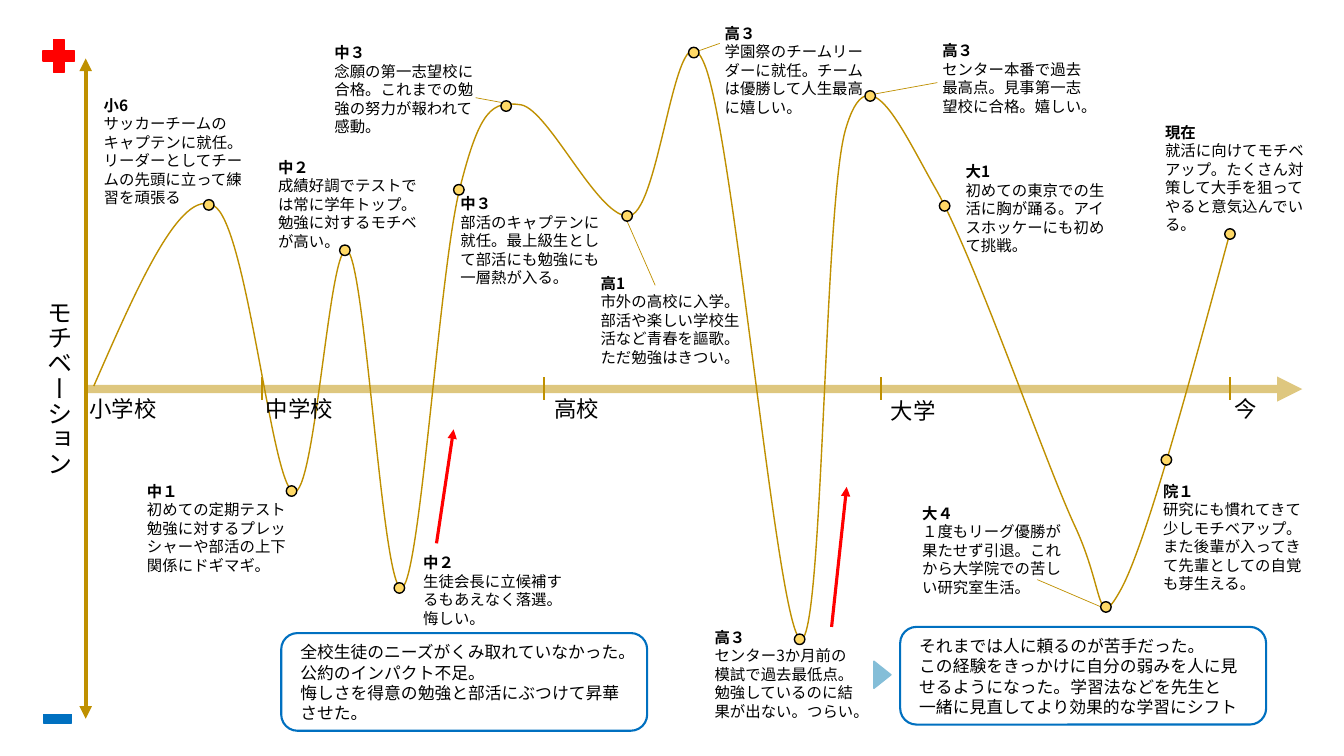
from lxml import etree
from pptx import Presentation
from pptx.dml.color import RGBColor
from pptx.enum import shapes, text
from pptx.oxml.ns import qn
from pptx.util import Pt

BLACK = RGBColor(0x00, 0x00, 0x00)
GOLD = RGBColor(0xBF, 0x90, 0x00)
YELLOW = RGBColor(0xFF, 0xD9, 0x66)
RED = RGBColor(0xFF, 0x00, 0x00)
BLUE = RGBColor(0x00, 0x70, 0xC0)
SKY = RGBColor(0x84, 0xBE, 0xD8)
FONT = "Noto Sans CJK JP"
LEADING = 1.2
MSO = shapes.MSO_SHAPE


class Board:
    """Draws on one slide; all lengths are in points."""

    def __init__(self, s):
        self.s = s

    def text(self, x, y, w, h, paragraphs, size, bold_first=False, vert=None):
        sp = self.s.shapes.add_textbox(Pt(x), Pt(y), Pt(w), Pt(h))
        tf = sp.text_frame
        tf.word_wrap = True
        tf.auto_size = text.MSO_AUTO_SIZE.SHAPE_TO_FIT_TEXT
        if vert:
            sp._element.txBody.bodyPr.set("vert", vert)
        tf.text = "\n".join(paragraphs)
        for i, p in enumerate(tf.paragraphs):
            p.line_spacing = Pt(size * LEADING)
            for r in p.runs:
                r.font.size = Pt(size)
                r.font.name = FONT
                r.font.bold = bold_first and i == 0
                r.font.color.rgb = BLACK
                ea = etree.SubElement(r.font._element, qn("a:ea"))
                ea.set("typeface", FONT)

    def note(self, x, y, lines, heading, body):
        h = lines * 11 * LEADING + 7.2
        self.text(x, y, 114.5, h, [heading, body], 11, bold_first=True)

    def shape(self, kind, x, y, w, h, fill, line, weight=1, rotation=0):
        sp = self.s.shapes.add_shape(kind, Pt(x), Pt(y), Pt(w), Pt(h))
        sp.shadow.inherit = False
        sp.rotation = rotation
        if fill is None:
            sp.fill.background()
        else:
            sp.fill.solid()
            sp.fill.fore_color.rgb = fill
        sp.line.color.rgb = line
        sp.line.width = Pt(weight)

    def line(self, x1, y1, x2, y2, color, weight, ends=(), alpha=None):
        sp = self.s.shapes.add_connector(
            shapes.MSO_CONNECTOR.STRAIGHT, Pt(x1), Pt(y1), Pt(x2), Pt(y2))
        sp.line.color.rgb = color
        sp.line.width = Pt(weight)
        ln = sp.line._get_or_add_ln()
        if alpha:
            clr = ln.find(".//" + qn("a:srgbClr"))
            etree.SubElement(clr, qn("a:alpha")).set("val", str(alpha * 1000))
        for end in ends:
            etree.SubElement(ln, qn("a:" + end)).set("type", "triangle")
        etree.SubElement(sp._element.spPr, qn("a:effectLst"))

    def curve(self, box, start, segments, color, weight):
        """Open Bézier curve; box is left, top, right, bottom."""
        left, top, right, bottom = box
        fb = self.s.shapes.build_freeform(Pt(left), Pt(top))
        fb.add_line_segments([(Pt(right), Pt(bottom))], close=False)
        sp = fb.convert_to_shape()
        outline = sp._element.xpath(".//a:path")[0]
        for child in list(outline):
            outline.remove(child)
        steps = [("a:moveTo", start)] + [("a:cubicBezTo", c) for c in segments]
        for tag, coords in steps:
            step = etree.SubElement(outline, qn(tag))
            for x, y in zip(coords[::2], coords[1::2]):
                pt = etree.SubElement(step, qn("a:pt"))
                pt.set("x", str(Pt(x) - Pt(left)))
                pt.set("y", str(Pt(y) - Pt(top)))
        sp.shadow.inherit = False
        sp.fill.background()
        sp.line.color.rgb = color
        sp.line.width = Pt(weight)


CURVE = [
    (97.9, 205.2, 128.9, 133.9, 152.6, 146.9),
    (176.4, 159.1, 193.7, 345.6, 209.5, 351.4),
    (225.4, 357.1, 235.4, 167.8, 248.4, 179.3),
    (261.4, 190.8, 273.6, 427.7, 287.3, 419.8),
    (300.2, 412.6, 313.9, 193, 328.3, 135.4),
    (342.7, 77.8, 351.4, 72, 372.2, 74.9),
    (392.4, 78.5, 428.4, 158.4, 450, 154.1),
    (472.3, 149, 483.1, -4.3, 503.3, 46.1),
    (524.2, 96.5, 555.1, 448.6, 571.7, 456.5),
    (588.2, 463.7, 588.2, 145.4, 604.1, 92.2),
    (619.9, 38.2, 640.8, 85.7, 667.4, 133.2),
    (694.8, 180, 745.2, 326.9, 767.5, 375.1),
    (789.8, 422.6, 782.6, 454.3, 801.4, 419.8),
    (819.4, 385.2, 848.9, 275.8, 878.4, 167),
]
TICKS = [187.2, 388.8, 629.3, 878.4]
STAGES = [(56.9, 278.6, 70.6, "小学校"), (182.9, 278.6, 70.6, "中学校"),
          (388.8, 278.6, 70.6, "高校"), (629.3, 280.1, 70.6, "大学"),
          (874.8, 278.6, 31, "今")]
DOTS = [(145.4, 142.6), (204.5, 347), (242.6, 175), (281.5, 416.2),
        (324, 131.8), (357.8, 72), (444.2, 150.5), (491.8, 33.8),
        (567.4, 452.9), (617.8, 64.8), (671, 143.3), (786.2, 429.8),
        (829.4, 324.7), (874.8, 163.4)]
LEADERS = [(491.8, 38.9, 514.1, 31), (447.8, 157.7, 468, 203.8),
           (625.7, 67, 669.6, 59), (359.3, 73.4, 339.8, 69.8),
           (740.9, 414, 786.2, 433.4)]
# left, top, lines, heading, body
NOTES = [
    (67, 64.8, 6, "小6", "サッカーチームのキャプテンに就任。リーダーとしてチームの先頭に立って練習を頑張る"),
    (97.9, 340.6, 5, "中１", "初めての定期テスト勉強に対するプレッシャーや部活の上下関係にドギマギ。"),
    (191.5, 109.4, 5, "中２", "成績好調でテストでは常に学年トップ。勉強に対するモチベが高い。"),
    (295.2, 391.7, 4, "中２", "生徒会長に立候補するもあえなく落選。悔しい。"),
    (321.8, 135.4, 5, "中３", "部活のキャプテンに就任。最上級生として部活にも勉強にも一層熱が入る。"),
    (231.8, 27.4, 5, "中３", "念願の第一志望校に合格。これまでの勉強の努力が報われて感動。"),
    (421.9, 192.2, 5, "高1", "市外の高校に入学。部活や楽しい学校生活など青春を謳歌。ただ勉強はきつい。"),
    (510.5, 13.7, 5, "高３", "学園祭のチームリーダーに就任。チームは優勝して人生最高に嬉しい。"),
    (503.3, 445, 5, "高３", "センター3か月前の模試で過去最低点。勉強しているのに結果が出ない。つらい。"),
    (666, 25.9, 4, "高３", "センター本番で過去最高点。見事第一志望校に合格。嬉しい。"),
    (682.6, 112.3, 5, "大1", "初めての東京での生活に胸が踊る。アイスホッケーにも初めて挑戦。"),
    (651.6, 356.4, 5, "大４", "１度もリーグ優勝が果たせず引退。これから大学院での苦しい研究室生活。"),
    (823.7, 340.6, 6, "院１", "研究にも慣れてきて少しモチベアップ。また後輩が入ってきて先輩としての自覚も芽生える。"),
    (825.1, 84.2, 6, "現在", "就活に向けてモチベアップ。たくさん対策して大手を狙ってやると意気込んでいる。"),
]
LESSONS = [
    (200.9, 452.2, ["全校生徒のニーズがくみ取れていなかった。公約のインパクト不足。",
                    "悔しさを得意の勉強と部活にぶつけて昇華させた。"]),
    (643, 447.8, ["それまでは人に頼るのが苦手だった。\vこの経験をきっかけに自分の弱みを人に"
                  "見せるようになった。学習法などを先生と",
                  "一緒に見直してより効果的な学習にシフト"]),
]


def main():
    prs = Presentation()
    prs.slide_width, prs.slide_height = Pt(960), Pt(540)
    board = Board(prs.slides.add_slide(prs.slide_layouts[6]))

    # Motivation curve and time axis
    board.curve((67, 36, 878.4, 456.5), (67, 275.8), CURVE, GOLD, 1)
    board.line(61.2, 277.9, 930.2, 277.9, GOLD, 6, ["tailEnd"], alpha=50)
    for x in TICKS:
        board.line(x, 269.3, x, 285.8, GOLD, 1.5)
    for x, y, w, stage in STAGES:
        board.text(x, y, w, 26.4, [stage], 16)

    # Motivation axis
    board.text(20.9, 207.4, 36, 140.4, ["モチベーション"], 18, vert="eaVert")
    board.line(61.2, 41.8, 61.2, 513.4, GOLD, 3, ["headEnd", "tailEnd"])
    board.shape(MSO.MATH_PLUS, 26.6, 23.8, 31, 32.4, RED, RED)
    board.shape(MSO.MATH_MINUS, 27.4, 500.4, 27.4, 25.9, BLUE, BLUE)

    # Events
    for leader in LEADERS:
        board.line(*leader, GOLD, 0.5)
    for x, y in DOTS:
        board.shape(MSO.OVAL, x, y, 7.5, 7.5, YELLOW, BLACK)
    for note in NOTES:
        board.note(*note)

    # Lessons learned and recovery arrows
    for x, y, paragraphs in LESSONS:
        board.text(x + 6.5, y + 2.9, 245.5, 65.4, paragraphs, 12)
        board.shape(MSO.ROUNDED_RECTANGLE, x, y, 261.4, 69.8, None, BLUE, 1.5)
    board.shape(MSO.ISOSCELES_TRIANGLE, 620.6, 475.9, 19.4, 12.2, SKY, SKY, rotation=90)
    board.line(594, 447.8, 604.8, 347.8, RED, 2.25, ["tailEnd"])
    board.line(311.8, 388.1, 324, 306.7, RED, 2.25, ["tailEnd"])

    prs.save("out.pptx")


if __name__ == "__main__":
    main()
